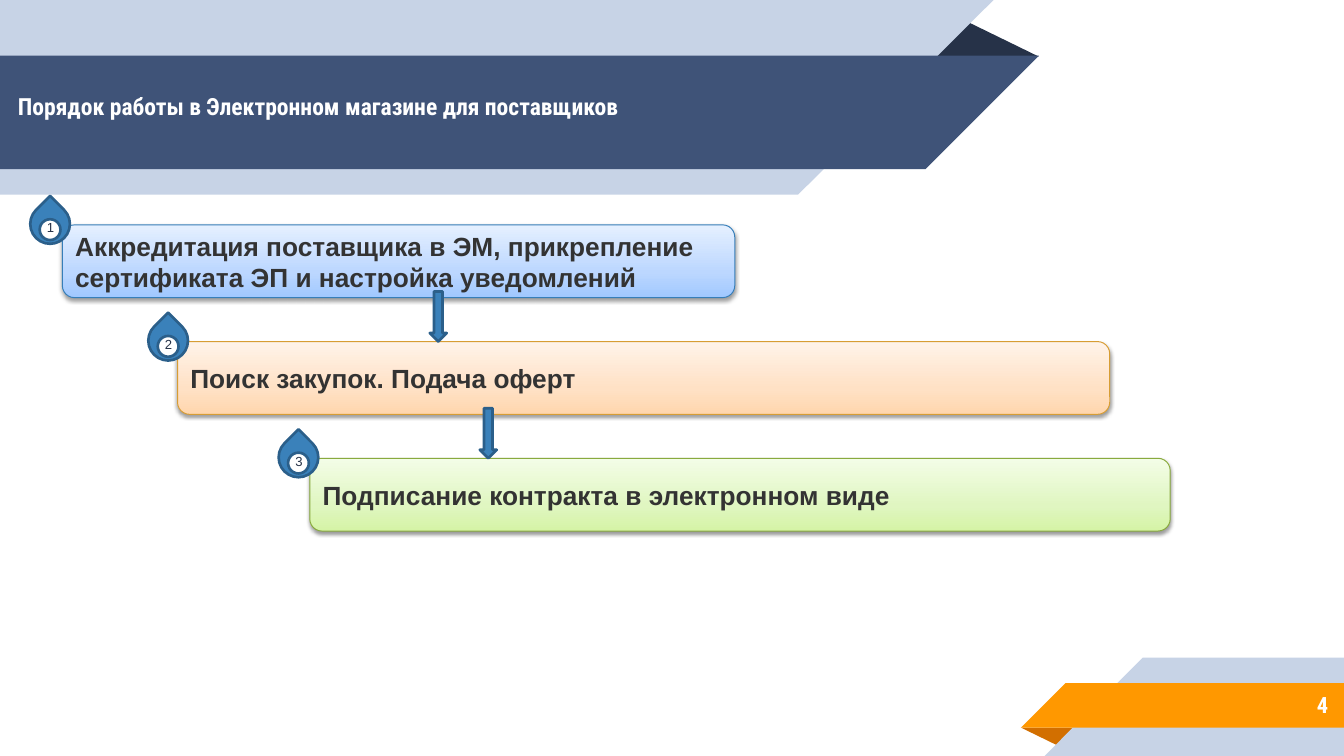
from copy import deepcopy

from lxml import etree
from pptx import Presentation
from pptx.dml.color import RGBColor
from pptx.enum.shapes import MSO_SHAPE as Preset
from pptx.enum.text import MSO_ANCHOR as Anchor, PP_ALIGN as Align
from pptx.oxml.ns import qn
from pptx.util import Inches, Pt

COLORS = {
    "pale": "C7D3E6", "navy": "3F5378", "ink": "263248", "white": "FFFFFF",
    "orange": "FF9800", "rust": "D26F00", "blue": "3A81BA", "outline": "2B5F8A",
    "text": "333333",
}
HEADING_FONT, BODY_FONT = "Roboto Condensed", "Arial"


def add_preset(preset, left, top, width, height, fill, line=COLORS["outline"], weight=2):
    shape = slide.shapes.add_shape(
        preset, Inches(left), Inches(top), Inches(width), Inches(height))
    shape.shadow.inherit = False
    shape.fill.solid()
    shape.fill.fore_color.rgb = RGBColor.from_string(fill)
    shape.line.color.rgb = RGBColor.from_string(line)
    shape.line.width = Pt(weight)
    return shape


def write(shape, text, font, size, color, align=Align.LEFT, anchor=Anchor.MIDDLE,
          bold=True, margin=0.1):
    """Put one formatted run into a shape; margin is the top and bottom inset."""
    frame = shape.text_frame
    frame.word_wrap = True
    frame.vertical_anchor = anchor
    frame.margin_left = frame.margin_right = Inches(0.1)
    frame.margin_top = frame.margin_bottom = Inches(margin)
    paragraph = frame.paragraphs[0]
    paragraph.alignment = align
    run = paragraph.add_run()
    run.text = text
    run.font.name, run.font.size, run.font.bold = font, Pt(size), bold
    run.font.color.rgb = RGBColor.from_string(color)


presentation = Presentation()
presentation.slide_width, presentation.slide_height = Inches(14.23), Inches(8)
slide = presentation.slides.add_slide(presentation.slide_layouts[5])

# Folded ribbons at the top and in the bottom right corner
ribbons = [
    ("ink", [(9.79, 0.6), (10.18, 0.2), (11, 0.6)]),
    ("pale", [(0, 0), (10.52, 0), (8.45, 2.06), (0, 2.06)]),
    ("navy", [(0, 0.59), (11, 0.59), (9.8, 1.79), (0, 1.79)]),
    ("rust", [(10.81, 7.7), (11.42, 7.7), (11.22, 7.9)]),
    ("pale", [(12.1, 6.96), (14.23, 6.96), (14.23, 8), (11.06, 8)]),
    ("orange", [(11.28, 7.23), (14.23, 7.23), (14.23, 7.7), (10.81, 7.7)]),
]
for color, points in ribbons:
    corners = [(Inches(x), Inches(y)) for x, y in points]
    builder = slide.shapes.build_freeform(*corners[0])
    builder.add_line_segments(corners[1:])
    ribbon = builder.convert_to_shape()
    ribbon.shadow.inherit = False
    ribbon.fill.solid()
    ribbon.fill.fore_color.rgb = RGBColor.from_string(COLORS[color])
    ribbon.line.fill.background()

number = slide.shapes.add_textbox(Inches(11.85), Inches(7.21), Inches(2.31), Inches(0.49))
write(number, "4", HEADING_FONT, 17.1, COLORS["white"], Align.RIGHT)

title = slide.shapes.title
title.left, title.top, title.width, title.height = (
    Inches(0.09), Inches(0.7), Inches(10.15), Inches(0.84))
write(title, "Порядок работы в Электронном магазине для поставщиков",
      HEADING_FONT, 18, COLORS["white"])
title.element.getparent().append(title.element)  # in front of the ribbon

# Steps: text, left, width, badge left, gradient from bottom to top, line
steps = [
    ("Аккредитация поставщика в ЭМ, прикрепление сертификата ЭП и настройка уведомлений",
     0.66, 7.12, 0.32, ("A0C8FF", "BCD7FF", "E5F0FF"), "367EB9"),
    ("Поиск закупок. Подача оферт",
     1.88, 9.87, 1.57, ("FFD6AD", "FFE1C5", "FFF3E9"), "D79D34"),
    ("Подписание контракта в электронном виде",
     3.28, 9.11, 2.95, ("D5F4A6", "E0F6C1", "F3FDE7"), "89AA3E"),
]
step_tops = [2.38 + 1.235 * index for index in range(len(steps))]

for (text, left, width, _, gradient, line), top in zip(steps, step_tops):
    box = add_preset(Preset.ROUNDED_RECTANGLE, left, top, width, 0.77, gradient[0], line, 0.75)
    box.fill.gradient()
    box.fill.gradient_angle = 90
    properties = box.element.spPr
    stop_list = properties.find(".//" + qn("a:gsLst"))
    stop_list.append(deepcopy(stop_list[0]))
    for stop, position, color in zip(box.fill.gradient_stops, (0, 0.35, 1), gradient):
        stop.position = position
        stop.color.rgb = RGBColor.from_string(color)
    shadow = etree.SubElement(
        properties.find(qn("a:effectLst")), qn("a:outerShdw"),
        blurRad=str(Pt(3.1)), dist=str(Pt(1.6)), dir="5400000", rotWithShape="0")
    shade = etree.SubElement(shadow, qn("a:srgbClr"), val="000000")
    etree.SubElement(shade, qn("a:alpha"), val="38000")
    write(box, text, BODY_FONT, 20, COLORS["text"], margin=0.05)

for left, next_top in zip((4.55, 5.08), step_tops[1:]):
    add_preset(Preset.DOWN_ARROW, left, next_top - 0.53, 0.18, 0.53, COLORS["blue"])

for index, (step, step_top) in enumerate(zip(steps, step_tops), start=1):
    left, top = step[3], step_top - 0.22
    drop = add_preset(Preset.TEAR, left, top, 0.42, 0.42, COLORS["blue"])
    drop.rotation = 315
    add_preset(Preset.OVAL, left + 0.1, top + 0.16, 0.22, 0.22, COLORS["white"])
    label = slide.shapes.add_textbox(
        Inches(left + 0.03), Inches(top + 0.08), Inches(0.37), Inches(0.41))
    write(label, str(index), BODY_FONT, 10, COLORS["ink"], Align.CENTER, Anchor.TOP, bold=False)

presentation.save("out.pptx")
